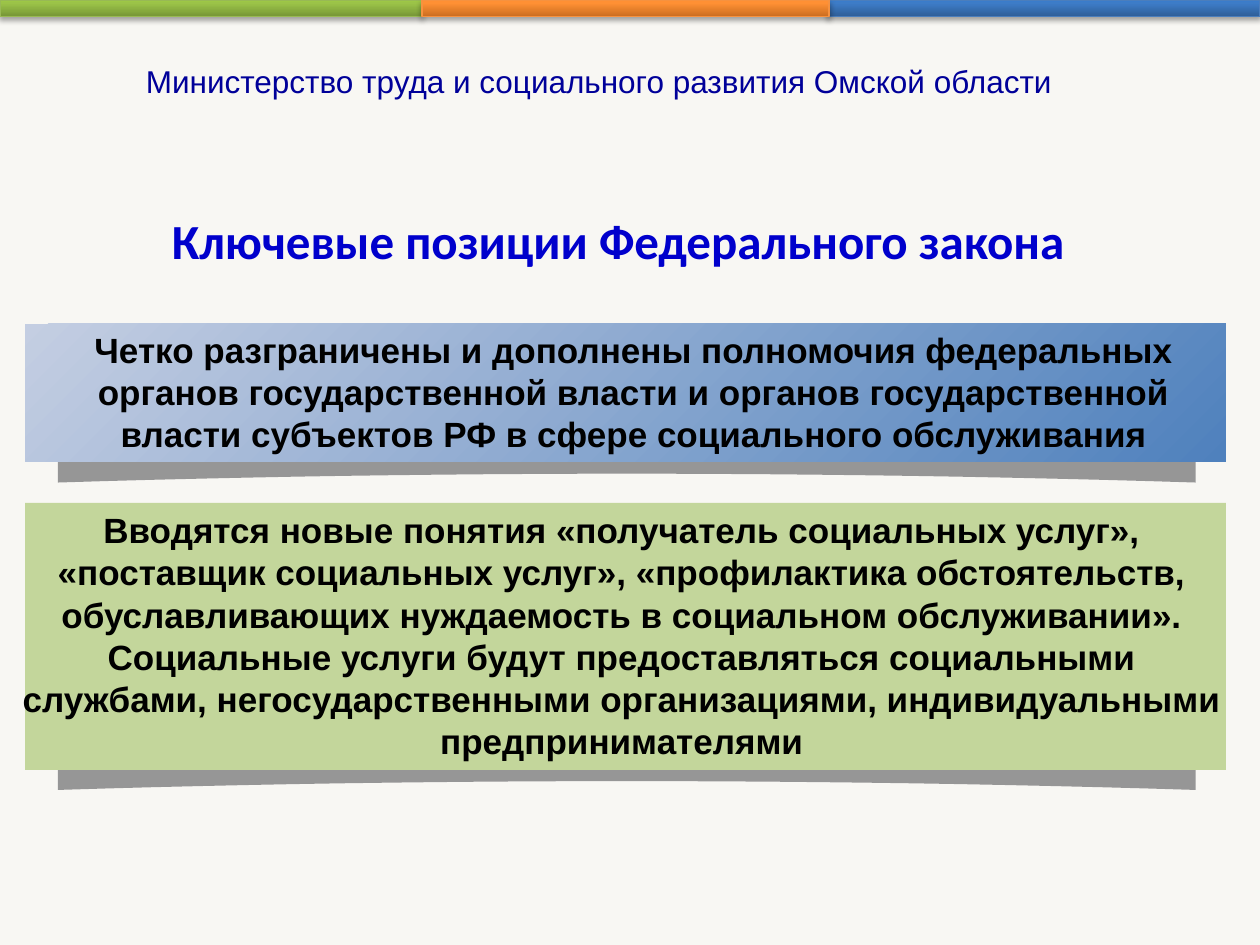
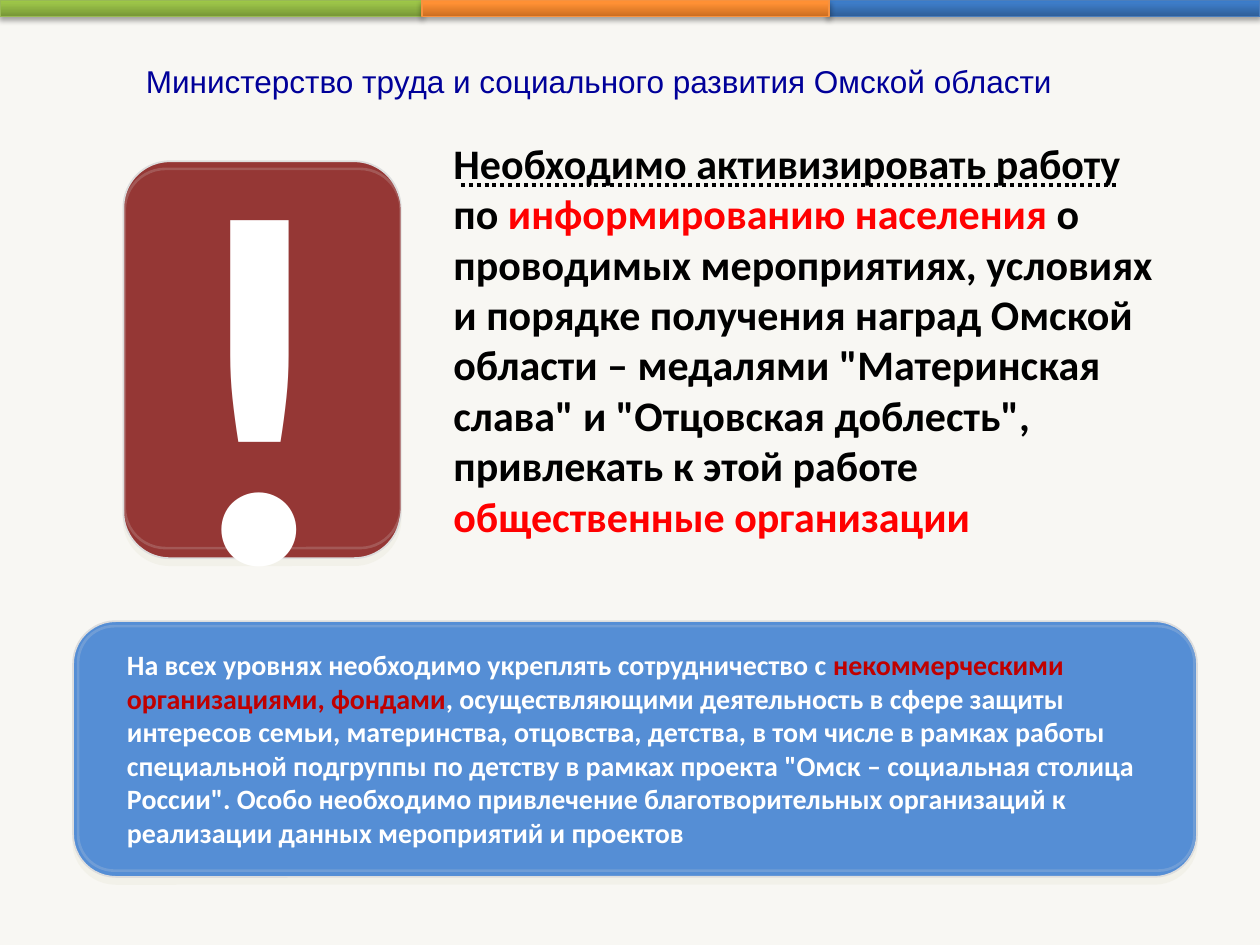
"""Build two slides on social services and public outreach in the Omsk region."""
from copy import deepcopy

from pptx import Presentation
from pptx.dml.color import RGBColor
from pptx.enum.dml import MSO_LINE
from pptx.enum.shapes import MSO_CONNECTOR, MSO_SHAPE
from pptx.enum.text import PP_ALIGN
from pptx.oxml import parse_xml
from pptx.oxml.ns import nsdecls, qn
from pptx.util import Inches, Pt

RECTANGLE = MSO_SHAPE.RECTANGLE
ROUNDED = MSO_SHAPE.ROUNDED_RECTANGLE
STRAIGHT = MSO_CONNECTOR.STRAIGHT
DOTTED = MSO_LINE.ROUND_DOT
LEFT, CENTER = PP_ALIGN.LEFT, PP_ALIGN.CENTER

BACKGROUND = "F8F7F3"
NAVY, BLUE, BLACK, WHITE = "000099", "0000CC", "000000", "FFFFFF"
RED, DARK_RED = "FF0000", "C00000"
GRAY, EDGE, MAROON, SKY, GREEN = "969696", "DDDDDD", "953735", "558ED5", "C3D69B"

SHADOW = (
    "<a:outerShdw " + nsdecls("a") + ' blurRad="{blur}" dist="{distance}" dir="5400000" '
    'rotWithShape="0"><a:srgbClr val="{tone}"><a:alpha val="{alpha}"/></a:srgbClr></a:outerShdw>'
)
BANDS = [
    (0, 3.35, "98B955", ["779737", "9BC348", "9DC746"]),
    (6.57, 3.43, "4B7EBC", ["2F5F99", "3D7CC7", "3A7CCB"]),
    (3.35, 3.23, "F69240", ["CC6E20", "FF9034", "FF9136"]),
]


def color(value):
    return RGBColor.from_string(value)


def add_text(slide, box, paragraphs, size, font, bold=True, align=LEFT, wrap=True):
    text_box = slide.shapes.add_textbox(*map(Inches, box))
    frame = text_box.text_frame
    frame.word_wrap = wrap
    for index, runs in enumerate(paragraphs):
        paragraph = frame.add_paragraph() if index else frame.paragraphs[0]
        paragraph.alignment = align
        for text, tone in runs:
            run = paragraph.add_run()
            run.text = text
            run.font.size = Pt(size)
            run.font.name = font
            run.font.bold = bold
            run.font.color.rgb = color(tone)


presentation = Presentation()
presentation.slide_width = Inches(10)
presentation.slide_height = Inches(7.5)
law_slide, outreach_slide = [
    presentation.slides.add_slide(presentation.slide_layouts[6]) for _ in range(2)
]

for slide in (law_slide, outreach_slide):
    slide.background.fill.solid()
    slide.background.fill.fore_color.rgb = color(BACKGROUND)
    for left, width, edge, tones in BANDS:
        band = slide.shapes.add_shape(RECTANGLE, Inches(left), 0, Inches(width), Inches(0.13))
        band.fill.gradient()
        band.fill.gradient_angle = 90
        stop_list = band._element.spPr.find(".//" + qn("a:gsLst"))
        stop_list.append(deepcopy(stop_list[1]))
        for stop, position, tone in zip(band.fill.gradient_stops, (0, 0.8, 1), tones):
            stop.position = position
            stop.color.rgb = color(tone)
        band.line.color.rgb = color(edge)
        band.line.width = Pt(0.75)
        band.shadow.inherit = False
        band._element.spPr.find(qn("a:effectLst")).append(parse_xml(
            SHADOW.format(blur=Pt(3.1), distance=Pt(1.8), tone=BLACK, alpha=35000)))
    ministry = "Министерство труда и социального развития Омской области"
    add_text(slide, (1.06, 0.44, 8.66, 0.73), [[(ministry, NAVY)]], 18, "Arial", bold=False)

add_text(law_slide, (1.22, 1.62, 7.37, 0.57), [[("Ключевые позиции Федерального закона", BLUE)]],
         28, "Calibri", align=CENTER, wrap=False)

powers = [
    "Четко разграничены и дополнены полномочия федеральных",
    "органов государственной власти и органов государственной",
    "власти субъектов РФ в сфере социального обслуживания",
]
concepts = [
    "Вводятся новые понятия «получатель социальных услуг»,",
    "«поставщик социальных услуг», «профилактика обстоятельств,",
    "обуславливающих нуждаемость в социальном обслуживании».",
    "Социальные услуги будут предоставляться социальными службами, "
    "негосударственными организациями, индивидуальными предпринимателями",
]
provisions = [
    (2.57, 1.09, 3.57, ["C4CEE2", "4F81BD"], (0.61, 2.56, 8.84, 1.11), powers, False),
    (3.99, 2.12, 6.01, [GREEN], (0.07, 3.99, 9.73, 2.12), concepts, True),
]
curve_left, curve_width, curve_steps = 0.46, 9.03, 24
for top, height, curve_top, tones, text_area, lines, wrap in provisions:
    curve = []
    for step in range(curve_steps + 1):
        offset = 1 - 2 * step / curve_steps
        x = curve_left + curve_width * (1 + offset) / 2
        curve.append((Inches(x), Inches(curve_top + 0.19 + 0.07 * offset ** 2)))
    curve += [
        (Inches(curve_left), Inches(curve_top + 0.07)),
        (Inches(curve_left + curve_width / 2), Inches(curve_top)),
        (Inches(curve_left + curve_width), Inches(curve_top + 0.07)),
    ]
    builder = law_slide.shapes.build_freeform(*curve[0])
    builder.add_line_segments(curve[1:], close=True)
    curl = builder.convert_to_shape()
    curl.fill.solid()
    curl.fill.fore_color.rgb = color(GRAY)
    plate = law_slide.shapes.add_shape(
        RECTANGLE, Inches(0.2), Inches(top), Inches(9.53), Inches(height))
    if len(tones) > 1:
        plate.fill.gradient()
        plate.fill.gradient_angle = 315
        for stop, position, tone in zip(plate.fill.gradient_stops, (0, 1), tones):
            stop.position = position
            stop.color.rgb = color(tone)
    else:
        plate.fill.solid()
        plate.fill.fore_color.rgb = color(tones[0])
    for shape in (curl, plate):
        shape.line.fill.background()
        shape.shadow.inherit = False
    add_text(law_slide, text_area, [[(line, BLACK)] for line in lines],
             20, "Arial", align=CENTER, wrap=wrap)

panels = [
    (MAROON, (0.98, 1.28, 2.2, 3.15), (0.99, 1.34, 2.19, 3.01)),
    (SKY, (0.58, 4.93, 8.92, 2.03), (0.62, 4.97, 8.86, 1.94)),
]
for tone, outer_box, inner_box in panels:
    group = outreach_slide.shapes.add_group_shape()
    outer, inner = [
        group.shapes.add_shape(ROUNDED, *map(Inches, box)) for box in (outer_box, inner_box)
    ]
    for shape, rounding, line_width in ((outer, 0.167, 1), (inner, 0.148, 1.5)):
        shape.adjustments[0] = rounding
        shape.fill.solid()
        shape.fill.fore_color.rgb = color(tone)
        shape.line.color.rgb = color(EDGE)
        shape.line.width = Pt(line_width)
        shape.shadow.inherit = False
    outer._element.spPr.find(qn("a:effectLst")).append(parse_xml(
        SHADOW.format(blur=0, distance=Pt(4), tone="EEECE1", alpha=50000)))
    edge_color = inner._element.spPr.find(qn("a:ln")).find(".//" + qn("a:srgbClr"))
    edge_color.append(parse_xml("<a:alpha " + nsdecls("a") + ' val="20000"/>'))

cooperation = [[
    ("На всех уровнях необходимо укреплять сотрудничество с ", WHITE),
    ("некоммерческими организациями, фондами", DARK_RED),
    (", осуществляющими деятельность в сфере защиты интересов семьи, материнства, отцовства, "
     "детства, в том числе в рамках работы специальной подгруппы по детству в рамках проекта "
     "\"Омск – социальная столица России\". Особо необходимо привлечение благотворительных "
     "организаций к реализации данных мероприятий и проектов", WHITE),
]]
add_text(outreach_slide, (0.91, 5.09, 8.5, 1.78), cooperation, 16, "Calibri")

outreach = [
    [("Необходимо активизировать работу", BLACK)],
    [
        ("по ", BLACK),
        ("информированию населения", RED),
        (" о проводимых мероприятиях, условиях и порядке получения наград Омской области – "
         "медалями \"Материнская слава\" и \"Отцовская доблесть\", привлекать к этой работе ", BLACK),
        ("общественные организации", RED),
    ],
]
add_text(outreach_slide, (3.5, 1.04, 5.98, 3.33), outreach, 24, "Calibri")
add_text(outreach_slide, (1.31, 0.44, 1.48, 4.93), [[("!", WHITE)]], 287, "Calibri", align=CENTER)

underline = outreach_slide.shapes.add_connector(
    STRAIGHT, Inches(3.66), Inches(1.47), Inches(8.86), Inches(1.47))
underline.line.color.rgb = color(BLACK)
underline.line.width = Pt(2.25)
underline.line.dash_style = DOTTED
underline._element.spPr.append(parse_xml("<a:effectLst " + nsdecls("a") + "/>"))

presentation.save("out.pptx")
